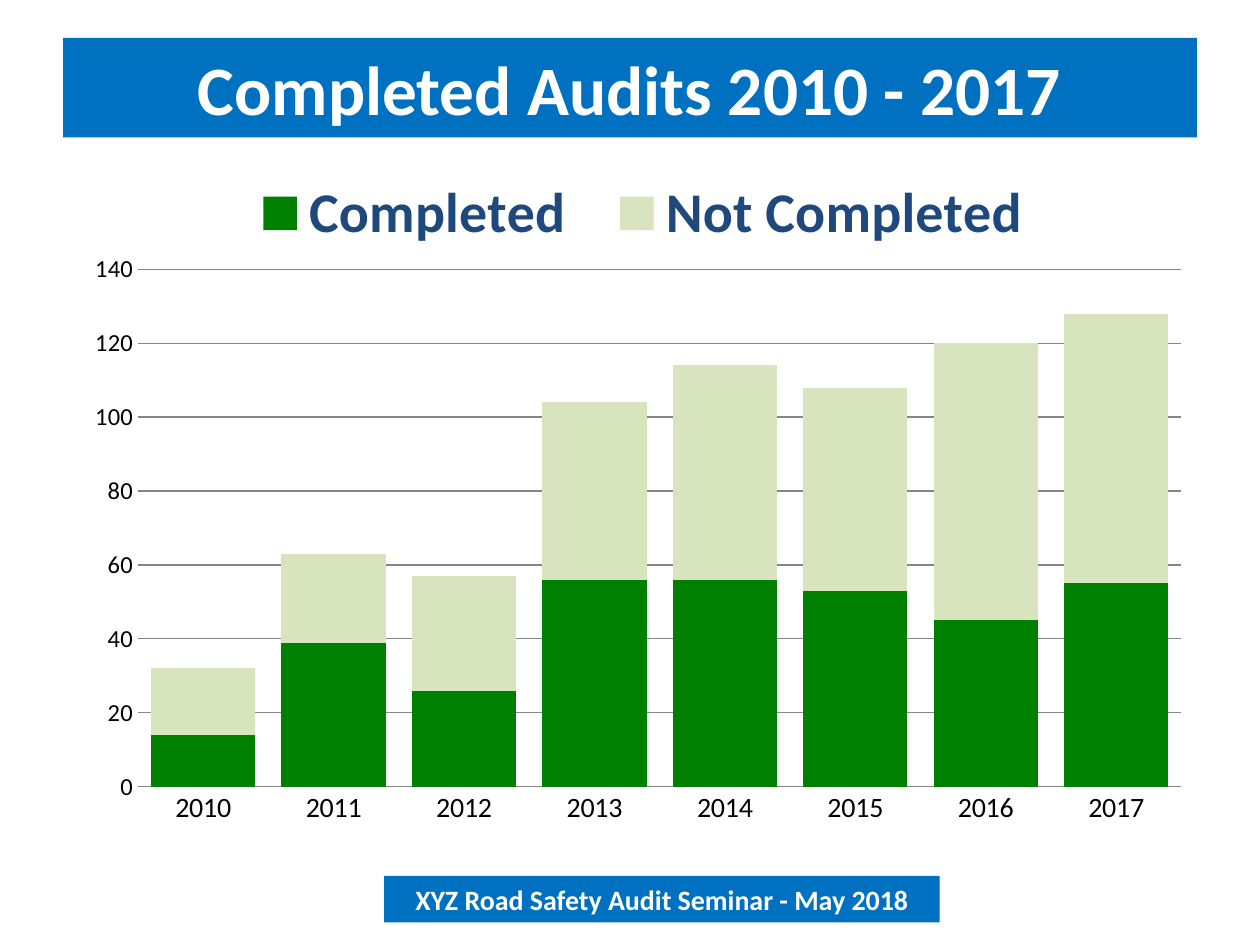
from lxml.etree import SubElement
from pptx import Presentation
from pptx.chart.data import CategoryChartData
from pptx.dml.color import RGBColor
from pptx.enum.chart import XL_CHART_TYPE, XL_LEGEND_POSITION, XL_TICK_MARK
from pptx.enum.shapes import MSO_SHAPE
from pptx.enum.text import MSO_ANCHOR, PP_ALIGN
from pptx.oxml import parse_xml
from pptx.oxml.ns import nsdecls, qn
from pptx.util import Pt

TITLE = "Completed Audits 2010 - 2017"
FOOTER = "XYZ Road Safety Audit Seminar - May 2018"
YEARS = [str(year) for year in range(2010, 2018)]
SERIES = [
    ("Completed", "008000", [14, 39, 26, 56, 56, 53, 45, 55]),
    ("Not Completed", "D7E4BD", [18, 24, 31, 48, 58, 55, 75, 73]),
]
BLUE, NAVY, WHITE, BLACK, GREY = "0070C0", "1F497D", "FFFFFF", "000000", "868686"


def paint(fill, color):
    fill.solid()
    fill.fore_color.rgb = RGBColor.from_string(color)


def style(font, size, color, bold=False):
    font.name = "Calibri"
    font.size = Pt(size)
    font.bold = bold
    font.color.rgb = RGBColor.from_string(color)


def banner(shape, text, size):
    paint(shape.fill, BLUE)
    shape.line.fill.background()
    frame = shape.text_frame
    frame.text = text
    frame.word_wrap = True
    frame.vertical_anchor = MSO_ANCHOR.MIDDLE
    frame.paragraphs[0].alignment = PP_ALIGN.CENTER
    style(frame.paragraphs[0].runs[0].font, size, WHITE, True)


def place(parent, index, box, inner=False):
    for old in parent.findall(qn("c:layout")):
        parent.remove(old)
    layout = parse_xml(f"<c:layout {nsdecls('c')}><c:manualLayout/></c:layout>")
    rules = [("layoutTarget", "inner")] if inner else []
    rules += [("xMode", "edge"), ("yMode", "edge"), *zip("xywh", box)]
    for tag, val in rules:
        SubElement(layout[0], qn(f"c:{tag}")).set("val", str(val))
    parent.insert(index, layout)


def draw(slide):
    data = CategoryChartData()
    data.categories = YEARS
    for name, _, vals in SERIES:
        data.add_series(name, vals)
    chart = slide.shapes.add_chart(
        XL_CHART_TYPE.COLUMN_STACKED, Pt(34), Pt(90), Pt(641.5), Pt(399.6), data
    ).chart
    chart.has_title = False
    style(chart.font, 10, BLACK)

    plot = chart.plots[0]
    plot.gap_width, plot.overlap = 25, 100
    plot.vary_by_categories = False
    for series, (_, color, _) in zip(plot.series, SERIES):
        paint(series.format.fill, color)

    years, count = chart.category_axis, chart.value_axis
    for axis, size in ((years, 16), (count, 14)):
        axis.major_tick_mark = axis.minor_tick_mark = XL_TICK_MARK.NONE
        style(axis.tick_labels.font, size, BLACK)
    count.minimum_scale, count.maximum_scale, count.major_unit = 0, 140, 20
    count.has_major_gridlines = True
    count.format.line.fill.background()
    for line in (years.format.line, count.major_gridlines.format.line):
        paint(line.fill, GREY)
        line.width = Pt(0.75)

    chart.has_legend = True
    chart.legend.position = XL_LEGEND_POSITION.BOTTOM
    chart.legend.include_in_layout = False
    style(chart.legend.font, 32, NAVY, True)
    root = chart.element
    place(root.find(".//" + qn("c:plotArea")), 0, (0.07, 0.16, 0.93, 0.74), True)
    place(root.find(".//" + qn("c:legend")), 1, (0.15, 0.02, 0.74, 0.12))


def main():
    """Build the completed audits slide."""
    deck = Presentation()
    deck.slide_width, deck.slide_height = Pt(720), Pt(540)
    slide = deck.slides.add_slide(deck.slide_layouts[5])
    foot = slide.shapes.add_shape(
        MSO_SHAPE.RECTANGLE, Pt(219.5), Pt(500.5), Pt(317.5), Pt(26.6)
    )
    foot.shadow.inherit = False
    banner(foot, FOOTER, 16)
    title = slide.shapes.title
    title.left, title.top, title.width, title.height = Pt(36), Pt(21.6), Pt(648), Pt(56.9)
    banner(title, TITLE, 39.6)
    draw(slide)
    deck.save("out.pptx")


if __name__ == "__main__":
    main()
